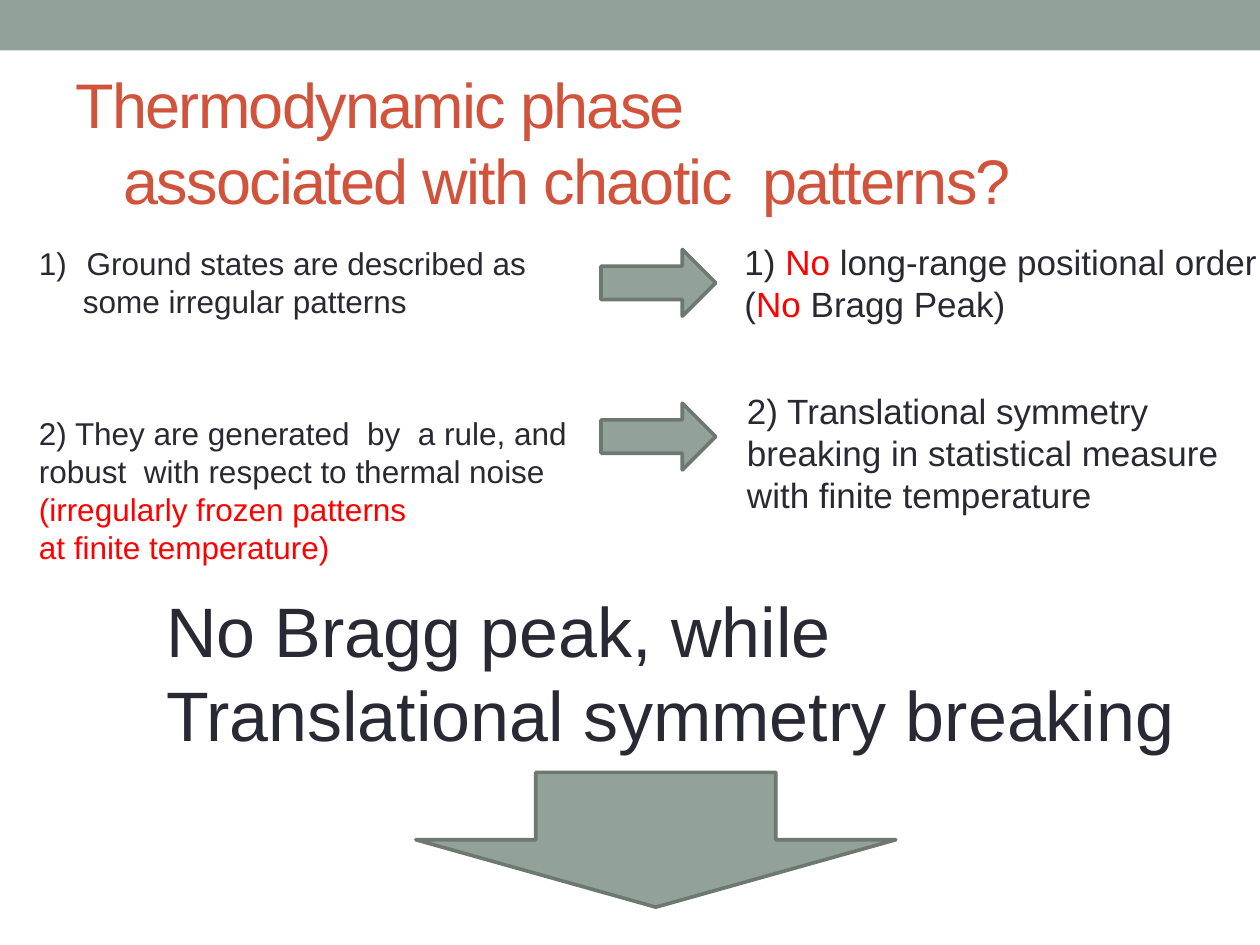
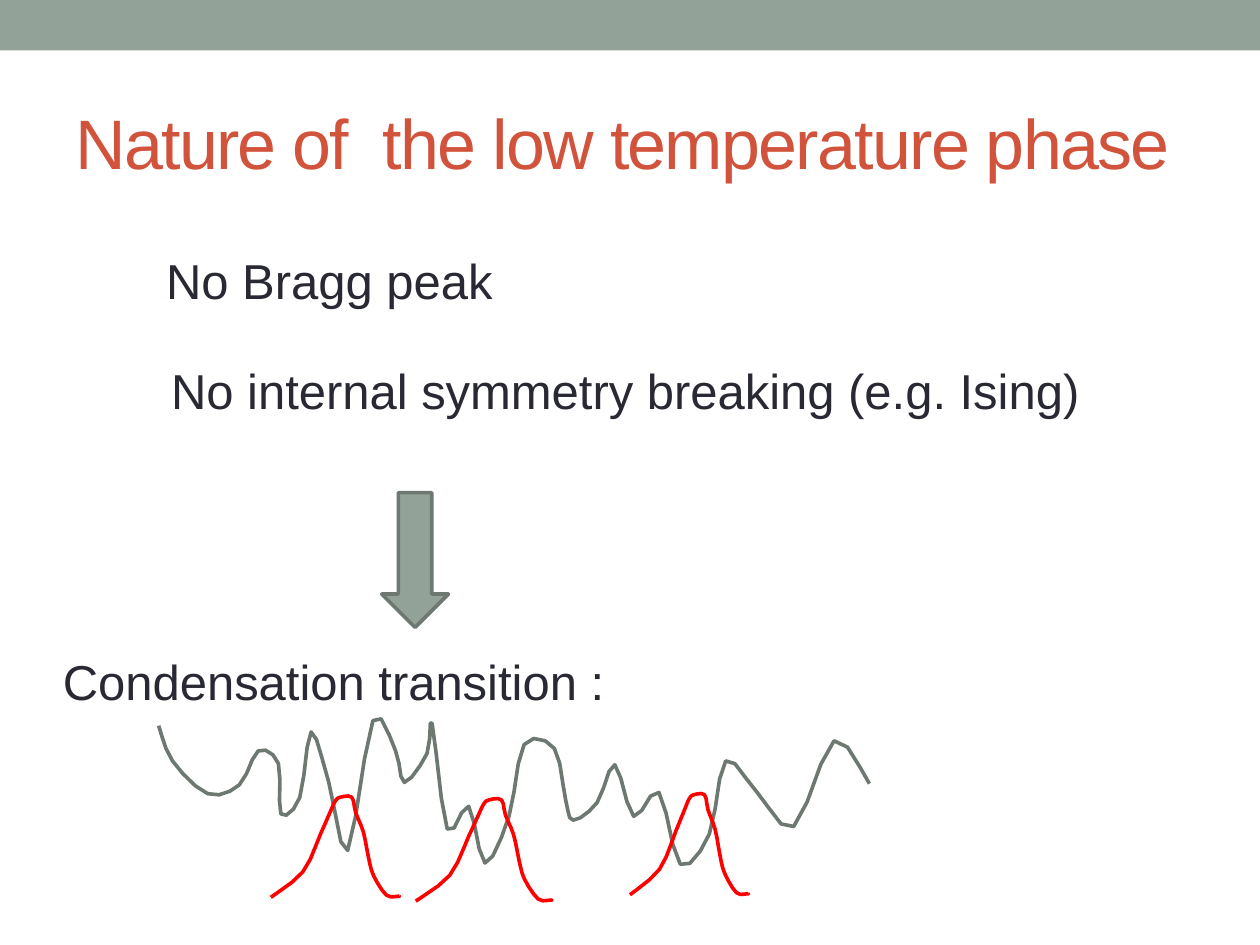
from pptx import Presentation
from pptx.dml.color import RGBColor
from pptx.enum.shapes import MSO_SHAPE as Shape
from pptx.enum.text import MSO_ANCHOR as Anchor, MSO_AUTO_SIZE as Fit, PP_ALIGN as Align
from pptx.oxml.ns import qn
from pptx.util import Inches, Pt
from lxml.etree import SubElement

WIDE, HIGH = 10, 7.5
FONT, LEAD = "Arial", 1.2
SAGE, EDGE, RUST, INK, RED = "93A299", "6D7871", "D2533C", "292934", "FF0000"
RIGHT, DOWN = Shape.RIGHT_ARROW, Shape.DOWN_ARROW

# A line is a list of (text, colour) runs; "left" indents it, "hang" spares
# its first row, "mark" numbers it. "\v" breaks a row inside a paragraph.
FIRST = {
    "title": (36, [{"runs": [("Thermodynamic phase\vassociated with chaotic  patterns?", RUST)],
                    "left": 0.38, "hang": True}]),
    "texts": [
        ((0.21, 1.89, 4.49, 0.71), 18, True, [
            {"runs": [("Ground states are described as", INK)],
             "left": 0.38, "hang": True, "mark": True},
            {"runs": [("some irregular patterns", INK)], "left": 0.35}]),
        ((0.21, 3.24, 4.49, 1.31), 18, True, [
            {"runs": [("2) They are generated  by  a rule, and  robust  "
                       "with respect to thermal noise", INK)]},
            {"runs": [("(irregularly frozen patterns", RED)]},
            {"runs": [("at finite temperature)", RED)]}]),
        ((5.81, 1.86, 4.38, 0.77), 20, False, [
            {"runs": [("1) ", INK), ("No", RED), (" long-range positional order", INK)]},
            {"runs": [("(", INK), ("No ", RED), ("Bragg Peak)", INK)]}]),
        ((5.83, 3.04, 4.05, 1.11), 20, False, [
            {"runs": [("2) Translational symmetry", INK)]},
            {"runs": [("breaking in statistical measure", INK)]},
            {"runs": [("with finite temperature", INK)]}]),
        ((1.22, 4.61, 8.29, 1.45), 40, False, [
            {"runs": [("No Bragg peak, while", INK)]},
            {"runs": [("Translational symmetry breaking", INK)]}]),
    ],
    "arrows": [(RIGHT, (4.77, 1.98, 0.91, 0.53)),
               (RIGHT, (4.77, 3.2, 0.91, 0.53)),
               (DOWN, (3.3, 6.13, 3.81, 1.07))],
    "curves": [],
}

# Energy landscape, in inches
LAND = [(1.26, 5.76), (1.37, 6.04), (1.65, 6.3), (1.9, 6.23), (2.05, 5.96), (2.21, 6.06),
        (2.23, 6.46), (2.38, 6.33), (2.47, 5.81), (2.61, 6.21), (2.76, 6.75), (2.96, 5.72),
        (3.14, 5.96), (3.21, 6.21), (3.39, 5.98), (3.43, 5.74), (3.55, 6.58), (3.72, 6.4),
        (3.85, 6.85), (4.04, 6.48), (4.16, 5.91), (4.4, 5.94), (4.49, 6.35), (4.55, 6.51),
        (4.74, 6.37), (4.88, 6.07), (5.03, 6.48), (5.23, 6.29), (5.4, 6.86), (5.63, 6.62),
        (5.76, 6.04), (6.01, 6.29), (6.3, 6.56), (6.62, 5.88), (6.9, 6.22)]

# One condensed peak, as shares of its box, and the boxes it fills
PEAK = [(0, 0.99), (0.25, 0.74), (0.39, 0.36), (0.46, 0.16), (0.5, 0.05), (0.54, 0.01),
        (0.63, 0.01), (0.66, 0.16), (0.72, 0.35), (0.76, 0.6), (0.8, 0.78), (0.9, 0.97),
        (0.99, 0.98), (1, 0.98)]
SPOTS = [(2.15, 6.32, 1.02, 0.81), (3.3, 6.34, 1.08, 0.82), (5, 6.3, 0.94, 0.81)]


def fill_box(box):
    x, y, w, h = box
    return [(x + a * w, y + b * h) for a, b in PEAK]


SECOND = {
    "title": (40, [{"runs": [("Nature of  the low temperature phase", RUST)]}]),
    "texts": [(box, 28, False, [{"runs": [(text, INK)]}]) for box, text in (
        ((1.22, 1.94, 2.83, 0.57), "No Bragg peak"),
        ((1.26, 2.81, 7.83, 0.57), "No internal symmetry breaking (e.g. Ising)"),
        ((0.4, 5.12, 4.55, 0.57), "Condensation transition :"))],
    "arrows": [(DOWN, (3.03, 3.91, 0.53, 1.07))],
    "curves": [(LAND, EDGE)] + [(fill_box(box), RED) for box in SPOTS],
}


def paint(code):
    return RGBColor.from_string(code)


def inches(box):
    return [Inches(v) for v in box]


def style(shape, fill=None, edge=None):
    """Set flat fill and outline, with no shadow."""
    shape.shadow.inherit = False
    for part, code in ((shape.fill, fill), (shape.line.fill, edge)):
        if code:
            part.solid()
            part.fore_color.rgb = paint(code)
        else:
            part.background()
    if edge:
        shape.line.width = Pt(2.08)


def add_run(para, text, size, code, track):
    run = para.add_run()
    run.text = text
    for name, value in {"name": FONT, "size": Pt(size)}.items():
        setattr(run.font, name, value)
    run.font.color.rgb = paint(code)
    if track:
        run._r.get_or_add_rPr().set("spc", str(track))


def write(frame, size, lines, look, track=None):
    """Write lines of coloured runs into a text frame."""
    for name, value in look.items():
        setattr(frame, name, value)
    for i, line in enumerate(lines):
        para = frame.paragraphs[0] if i == 0 else frame.add_paragraph()
        form = {"alignment": Align.LEFT, "line_spacing": Pt(size * LEAD),
                "space_before": Pt(0), "space_after": Pt(0)}
        for name, value in form.items():
            setattr(para, name, value)
        props = para._p.get_or_add_pPr()
        left = Inches(line.get("left", 0))
        props.set("marL", str(left))
        if line.get("hang"):
            props.set("indent", str(-left))
        if line.get("mark"):
            SubElement(props, qn("a:buFont"), typeface=FONT)
            SubElement(props, qn("a:buAutoNum"), type="arabicParenR")
        for text, code in line["runs"]:
            for n, row in enumerate(text.split("\v")):
                if n:
                    para.add_line_break()
                add_run(para, row, size, code, track)


def smooth(knots, steps=3):
    """Return points on a Catmull-Rom curve through the knots."""
    ends = [knots[0], *knots, knots[-1]]
    points = [knots[0]]
    for a, b, c, d in zip(ends, ends[1:], ends[2:], ends[3:]):
        for n in range(1, steps + 1):
            t = n / steps
            points.append(tuple(
                q + t / 2 * (r - p + t * (2 * p - 5 * q + 4 * r - s
                                          + t * (3 * q - p - 3 * r + s)))
                for p, q, r, s in zip(a, b, c, d)))
    return points


def draw(deck, data):
    slide = deck.slides.add_slide(deck.slide_layouts[5])
    shapes = slide.shapes

    # Band and title
    style(shapes.add_shape(Shape.RECTANGLE, *inches((0, 0, WIDE, 0.4))), SAGE)
    title = shapes.title
    title.left, title.top, title.width, title.height = inches((0.5, 0.58, 9, 1.08))
    write(title.text_frame, *data["title"],
          {"vertical_anchor": Anchor.MIDDLE, "auto_size": Fit.NONE, "word_wrap": True},
          track=-100)

    # Arrows and texts
    for kind, box in data["arrows"]:
        style(shapes.add_shape(kind, *inches(box)), SAGE, EDGE)
    for box, size, wrap, lines in data["texts"]:
        frame = shapes.add_textbox(*inches(box)).text_frame
        write(frame, size, lines, {"word_wrap": wrap, "auto_size": Fit.SHAPE_TO_FIT_TEXT})

    # Curves
    for knots, code in data["curves"]:
        start, *rest = [inches(point) for point in smooth(knots)]
        pen = shapes.build_freeform(*start)
        pen.add_line_segments(rest, close=False)
        style(pen.convert_to_shape(), edge=code)


def main():
    deck = Presentation()
    deck.slide_width, deck.slide_height = inches((WIDE, HIGH))
    for data in (FIRST, SECOND):
        draw(deck, data)
    deck.save("out.pptx")


if __name__ == "__main__":
    main()
